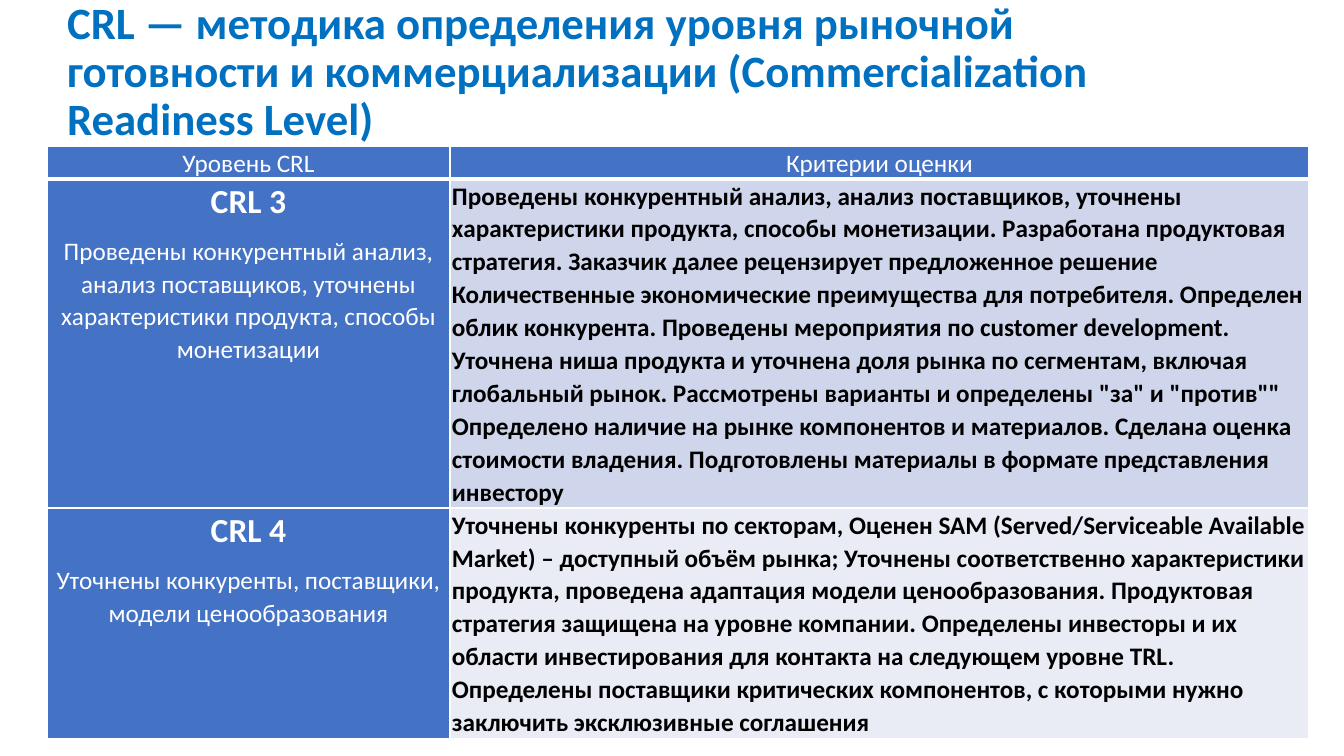
from lxml.etree import SubElement
from pptx import Presentation
from pptx.dml.color import RGBColor
from pptx.enum.text import MSO_ANCHOR, MSO_AUTO_SIZE, PP_ALIGN
from pptx.oxml.ns import qn
from pptx.util import Pt

PX = 914400 / 100.8
FONT = "Calibri"
WHITE = RGBColor(0xFF, 0xFF, 0xFF)
BLACK = RGBColor(0, 0, 0)
TITLE_BLUE = RGBColor(0x00, 0x70, 0xC0)
TABLE_BLUE = RGBColor(0x44, 0x72, 0xC4)
BANDS = [RGBColor(0xCF, 0xD5, 0xEA), RGBColor(0xE9, 0xEB, 0xF5)]

TITLE = ("CRL — методика определения уровня рыночной готовности и "
         "коммерциализации (Commercialization Readiness Level)")
HEADERS = ["Уровень СRL", "Критерии оценки"]
LEVELS = [
    ("CRL 3",
     "Проведены конкурентный анализ, анализ поставщиков, уточнены "
     "характеристики продукта, способы монетизации",
     "Проведены конкурентный анализ, анализ поставщиков, уточнены "
     "характеристики продукта, способы монетизации. Разработана продуктовая "
     "стратегия. Заказчик далее рецензирует предложенное решение "
     "Количественные экономические преимущества для потребителя. Определен "
     "облик конкурента. Проведены мероприятия по customer development. "
     "Уточнена ниша продукта и уточнена доля рынка по сегментам, включая "
     "глобальный рынок. Рассмотрены варианты и определены \"за\" и \"против\"\" "
     "Определено наличие на рынке компонентов и материалов. Сделана оценка "
     "стоимости владения. Подготовлены материалы в формате представления "
     "инвестору"),
    ("CRL 4",
     "Уточнены конкуренты, поставщики, модели ценообразования",
     "Уточнены конкуренты по секторам, Оценен SAM (Served/Serviceable Available "
     "Market) – доступный объём рынка; Уточнены соответственно характеристики "
     "продукта, проведена адаптация модели ценообразования. Продуктовая "
     "стратегия защищена на уровне компании. Определены инвесторы и их "
     "области инвестирования для контакта на следующем уровне TRL. "
     "Определены поставщики критических компонентов, с которыми нужно "
     "заключить эксклюзивные соглашения"),
]


def px(length):
    """Turn a length in px into EMU."""
    return round(length * PX)


def style_paragraph(paragraph, size, color, bold, align, spacing):
    """Set the font, alignment and line spacing of a paragraph."""
    paragraph.alignment = align
    paragraph.line_spacing = spacing
    font = paragraph.font
    font.name, font.size, font.bold = FONT, Pt(size), bold
    font.color.rgb = color


def add_borders(cell, bottom):
    """Draw white borders round a cell, with its own bottom width in points."""
    properties = cell._tc.get_or_add_tcPr()
    for side, width in (("L", 1), ("R", 1), ("T", 1), ("B", bottom)):
        line = SubElement(properties, qn(f"a:ln{side}"), w=str(Pt(width)))
        fill = SubElement(line, qn("a:solidFill"))
        SubElement(fill, qn("a:srgbClr"), val=str(WHITE))


def fill_cell(cell, texts, fill, color, align=PP_ALIGN.CENTER, bottom=1):
    """Write (text, size, bold) paragraphs into a cell and paint it."""
    cell.margin_left = cell.margin_right = px(2)
    cell.margin_top = cell.margin_bottom = 0
    add_borders(cell, bottom)
    cell.fill.solid()
    cell.fill.fore_color.rgb = fill
    frame = cell.text_frame
    frame.text = "\n".join(text for text, _, _ in texts)
    for paragraph, (_, size, bold) in zip(frame.paragraphs, texts):
        style_paragraph(paragraph, size, color, bold, align, 1.07)
        paragraph.space_after = Pt(8)


def place_title(slide, left, top, width, height):
    """Move the title placeholder into the box and format it."""
    title = slide.shapes.title
    title.left, title.top = px(left), px(top)
    title.width, title.height = px(width), px(height)
    frame = title.text_frame
    frame.text = TITLE
    frame.word_wrap = True
    frame.auto_size = MSO_AUTO_SIZE.NONE
    frame.vertical_anchor = MSO_ANCHOR.MIDDLE
    style_paragraph(frame.paragraphs[0], 32, TITLE_BLUE, True, PP_ALIGN.LEFT, 0.9)


def place_levels_table(slide, left, top, width, height):
    """Place the table of readiness levels and their criteria in the box."""
    table = slide.shapes.add_table(len(LEVELS) + 1, len(HEADERS), px(left),
                                   px(top), px(width), px(height)).table
    level_width, header_height, first_height = 403, 32, 329
    for column, size in zip(table.columns, (level_width, width - level_width)):
        column.width = px(size)
    last_height = height - header_height - first_height
    for row, size in zip(table.rows, (header_height, first_height, last_height)):
        row.height = px(size)
    for index, header in enumerate(HEADERS):
        fill_cell(table.cell(0, index), [(header, 18, False)], TABLE_BLUE, WHITE,
                  bottom=3)
    for index, (level, summary, criteria) in enumerate(LEVELS):
        fill_cell(table.cell(index + 1, 0),
                  [(level, 24, True), (summary, 18, False)], TABLE_BLUE, WHITE)
        fill_cell(table.cell(index + 1, 1), [(criteria, 18, True)],
                  BANDS[index], BLACK, PP_ALIGN.LEFT)


def main():
    """Build the slide and save it."""
    presentation = Presentation()
    presentation.slide_width, presentation.slide_height = px(1344), px(756)
    slide = presentation.slides.add_slide(presentation.slide_layouts[5])
    place_title(slide, 57, 0, 1159, 146)
    place_levels_table(slide, 47, 146, 1262, 591)
    presentation.save("out.pptx")


if __name__ == "__main__":
    main()
